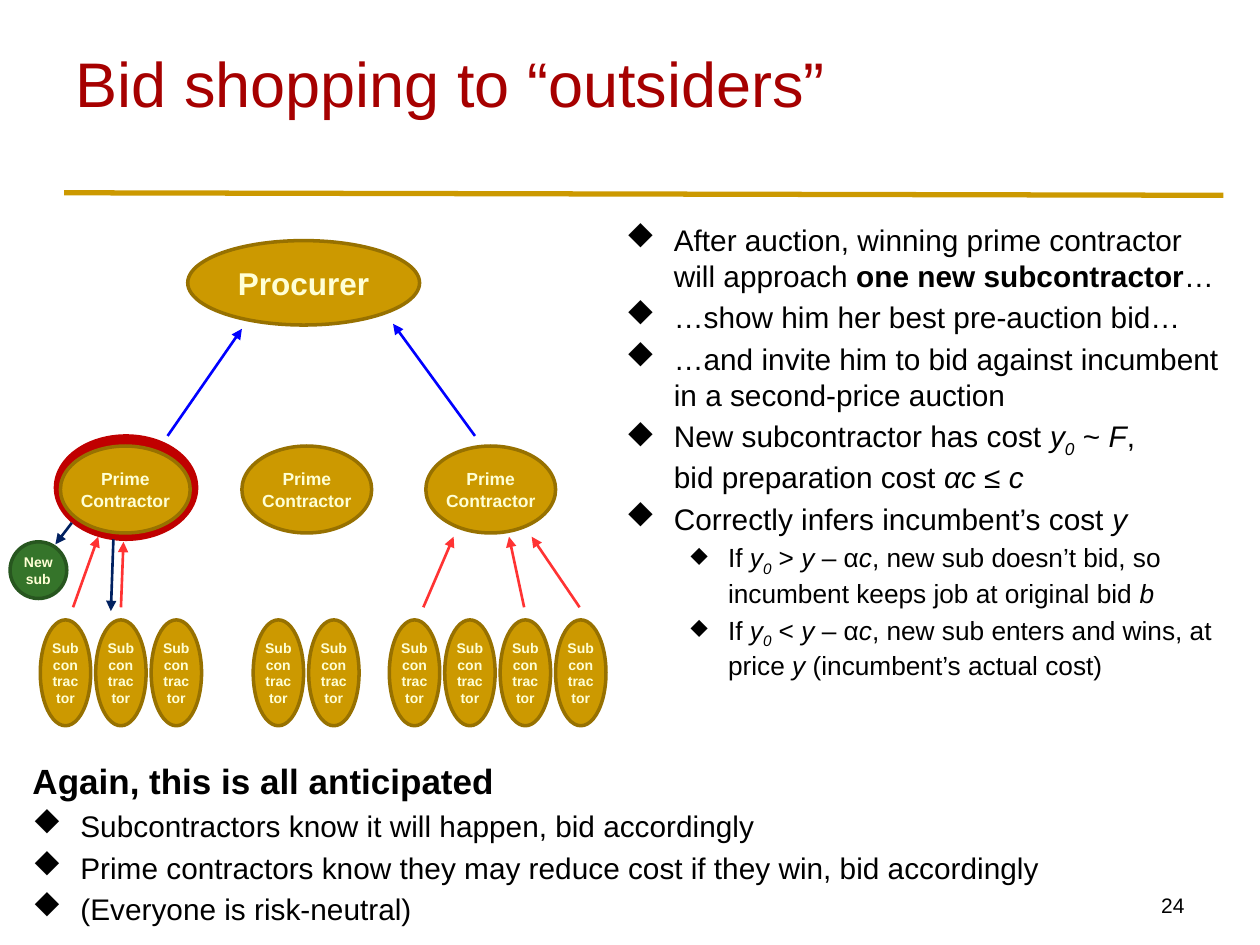
import pptx
import pptx.util
import pptx.dml.color
import pptx.enum.shapes
import pptx.enum.text
import pptx.oxml.ns
import lxml.etree

Inches = pptx.util.Inches
Pt = pptx.util.Pt
RGBColor = pptx.dml.color.RGBColor
Align = pptx.enum.text.PP_ALIGN
Anchor = pptx.enum.text.MSO_ANCHOR
qn = pptx.oxml.ns.qn

BLACK = RGBColor(0x00, 0x00, 0x00)
TITLE_RED = RGBColor(0xA6, 0x00, 0x00)
GOLD = RGBColor(0xCC, 0x99, 0x00)
DARK_GOLD = RGBColor(0x97, 0x71, 0x00)
CREAM = RGBColor(0xFF, 0xFF, 0xD5)
WINNER_RED = RGBColor(0xC0, 0x00, 0x00)
GREEN = RGBColor(0x35, 0x74, 0x2A)
DARK_GREEN = RGBColor(0x27, 0x56, 0x1F)
BID_RED = RGBColor(0xFF, 0x33, 0x33)
BLUE = RGBColor(0x00, 0x00, 0xFF)
NAVY = RGBColor(0x00, 0x20, 0x60)

# Paragraphs: (bullet level or None, size, [(text, style)]);
# styles are b = bold, i = italic, s = italic subscript
AUCTION_POINTS = [
    (0, 17, [("After auction, winning prime contractor will approach ", ""),
             ("one new subcontractor", "b"), ("…", "")]),
    (0, 17, [("…show him her best pre-auction bid…", "")]),
    (0, 17, [("…and invite him to bid against incumbent in a second-price auction", "")]),
    (0, 17, [("New subcontractor has cost ", ""), ("y", "i"), ("0", "s"), (" ~ ", ""),
             ("F", "i"), (", \nbid preparation cost ", ""), ("αc ", "i"), ("≤ ", ""),
             ("c", "i")]),
    (0, 17, [("Correctly infers incumbent’s cost ", ""), ("y", "i")]),
    (1, 15, [("If ", ""), ("y", "i"), ("0", "s"), (" > ", ""), ("y", "i"), (" – α", ""),
             ("c", "i"), (", new sub doesn’t bid, so incumbent keeps job at original bid ", ""),
             ("b", "i")]),
    (1, 15, [("If ", ""), ("y", "i"), ("0", "s"), (" < ", ""), ("y", "i"), (" – α", ""),
             ("c", "i"), (", new sub enters and wins, at price ", ""), ("y", "i"),
             (" (incumbent’s actual cost)", "")]),
]
ANTICIPATION_POINTS = [
    (None, 20, [("Again, this is all anticipated", "b")]),
    (0, 17, [("Subcontractors know it will happen, bid accordingly", "")]),
    (0, 17, [("Prime contractors know they may reduce cost if they win, bid accordingly", "")]),
    (0, 17, [("(Everyone is risk-neutral)", "")]),
]

BULLET_INDENTS = [(0.38, -0.38, 100), (0.81, -0.31, 80)]  # margin, indent, size %
BULLET_FONT, BULLET_DIAMOND = "Wingdings", "u"  # "u" is the diamond in this symbol font

PRIME_LEFTS = [0.48, 1.92, 3.38]
SUB_GROUPS = [(0.32, 3), (2.01, 2), (3.09, 4)]  # left of first, count
SUB_PITCH = 0.44

SUB_BIDS = [((0.58, 4.82), (0.78, 4.26)), ((0.96, 4.82), (0.98, 4.3)),
            ((3.36, 4.82), (3.6, 4.26)), ((4.16, 4.82), (4.04, 4.26)),
            ((4.6, 4.82), (4.22, 4.26))]
PRIME_BIDS = [((1.33, 3.46), (1.92, 2.61)), ((3.77, 3.46), (3.12, 2.57))]
SHOPPING = [((0.57, 4.15), (0.44, 4.32)), ((0.9, 4.28), (0.88, 4.85))]


def format_font(font, size, color, bold=False):
    font.name = "Arial"
    font.size = Pt(size)
    font.color.rgb = color
    font.bold = bold


def add_ellipse(slide, box, fill, outline, label="", size=10, inset=0):
    ellipse = slide.shapes.add_shape(
        pptx.enum.shapes.MSO_SHAPE.OVAL, *map(Inches, box))
    ellipse.shadow.inherit = False
    ellipse.fill.solid()
    ellipse.fill.fore_color.rgb = fill
    ellipse.line.color.rgb = outline
    ellipse.line.width = Pt(2)
    if label:
        frame = ellipse.text_frame
        frame.margin_left = frame.margin_right = Inches(inset)
        frame.margin_top = frame.margin_bottom = Inches(inset / 2)
        frame.vertical_anchor = Anchor.MIDDLE
        frame.text = label
        frame.paragraphs[0].alignment = Align.CENTER
        for run in frame.paragraphs[0].runs:
            format_font(run.font, size, CREAM, bold=True)


def add_line(slide, start, end, color, width, arrow=True):
    line = slide.shapes.add_connector(
        pptx.enum.shapes.MSO_CONNECTOR.STRAIGHT, *map(Inches, start + end))
    line.line.color.rgb = color
    line.line.width = Pt(width)
    if arrow:
        lxml.etree.SubElement(line.line._get_or_add_ln(), qn("a:tailEnd"), type="triangle")
    lxml.etree.SubElement(line._element.spPr, qn("a:effectLst"))


def add_bullet(paragraph, level):
    margin, indent, percent = BULLET_INDENTS[level]
    paragraph.level = level
    properties = paragraph._p.get_or_add_pPr()
    properties.set("marL", str(Inches(margin)))
    properties.set("indent", str(Inches(indent)))
    color = lxml.etree.SubElement(properties, qn("a:buClr"))
    lxml.etree.SubElement(color, qn("a:srgbClr"), val=str(BLACK))
    lxml.etree.SubElement(properties, qn("a:buSzPct"), val=str(percent * 1000))
    lxml.etree.SubElement(properties, qn("a:buFont"), typeface=BULLET_FONT,
                          pitchFamily="2", charset="2")
    lxml.etree.SubElement(properties, qn("a:buChar"), char=BULLET_DIAMOND)


def add_styled_text(paragraph, text, style, size):
    for index, part in enumerate(text.split("\n")):
        if index:
            paragraph.add_line_break()
        run = paragraph.add_run()
        run.text = part
        format_font(run.font, size, BLACK, bold=style == "b")
        run.font.italic = style in ("i", "s")
        if style == "s":
            run.font._element.set("baseline", "-25000")


def add_points(slide, box, points):
    frame = slide.shapes.add_textbox(*map(Inches, box)).text_frame
    frame.word_wrap = True
    for index, (level, size, pieces) in enumerate(points):
        paragraph = frame.add_paragraph() if index else frame.paragraphs[0]
        paragraph.space_before = Pt(size * 0.2)
        if level is not None:
            add_bullet(paragraph, level)
        for text, style in pieces:
            add_styled_text(paragraph, text, style, size)


def set_title(slide, text):
    title = slide.shapes.title
    title.left, title.top, title.width, title.height = map(Inches, (0.5, 0.3, 9.34, 1.25))
    frame = title.text_frame
    frame.text = text
    frame.auto_size = pptx.enum.text.MSO_AUTO_SIZE.NONE
    frame.vertical_anchor = Anchor.TOP
    frame.paragraphs[0].alignment = Align.LEFT
    format_font(frame.paragraphs[0].runs[0].font, 36, TITLE_RED)


def add_page_number(slide, number):
    frame = slide.shapes.add_textbox(*map(Inches, (7.17, 6.83, 2.33, 0.5))).text_frame
    frame.word_wrap = True
    frame.vertical_anchor = Anchor.BOTTOM
    frame.text = number
    frame.paragraphs[0].alignment = Align.RIGHT
    format_font(frame.paragraphs[0].runs[0].font, 12, BLACK)


def add_contractor_tree(slide):
    # Ring around the winning prime contractor, drawn behind it
    add_ellipse(slide, (0.44, 3.46, 1.12, 0.82), WINNER_RED, WINNER_RED)

    # Procurer, prime contractors, subcontractors
    add_ellipse(slide, (1.49, 1.91, 1.84, 0.67), GOLD, DARK_GOLD, "Procurer", 18, 0.1)
    for left in PRIME_LEFTS:
        add_ellipse(slide, (left, 3.54, 1.03, 0.69), GOLD, DARK_GOLD, "Prime Contractor")
    for first, count in SUB_GROUPS:
        for index in range(count):
            add_ellipse(slide, (first + index * SUB_PITCH, 4.92, 0.4, 0.84),
                        GOLD, DARK_GOLD, "Sub\vcon\vtrac\vtor", 8)
    add_ellipse(slide, (0.08, 4.3, 0.45, 0.45), GREEN, DARK_GREEN, "New\vsub", 8)

    # Bids and bid shopping
    for arrows, color in ((SUB_BIDS, BID_RED), (PRIME_BIDS, BLUE), (SHOPPING, NAVY)):
        for start, end in arrows:
            add_line(slide, start, end, color, 1.5)


def main():
    deck = pptx.Presentation()
    deck.slide_width, deck.slide_height = Inches(10), Inches(7.5)
    slide = deck.slides.add_slide(deck.slide_layouts.get_by_name("Title Only"))

    # Heading and rule
    set_title(slide, "Bid shopping to “outsiders”")
    add_line(slide, (0.51, 1.53), (9.71, 1.55), GOLD, 3, arrow=False)

    # Diagram and explanations
    add_contractor_tree(slide)
    add_points(slide, (4.87, 1.71, 4.93, 4.95), AUCTION_POINTS)
    add_points(slide, (0.16, 5.98, 8.54, 1.36), ANTICIPATION_POINTS)
    add_page_number(slide, "24")

    deck.save("out.pptx")


if __name__ == "__main__":
    main()
